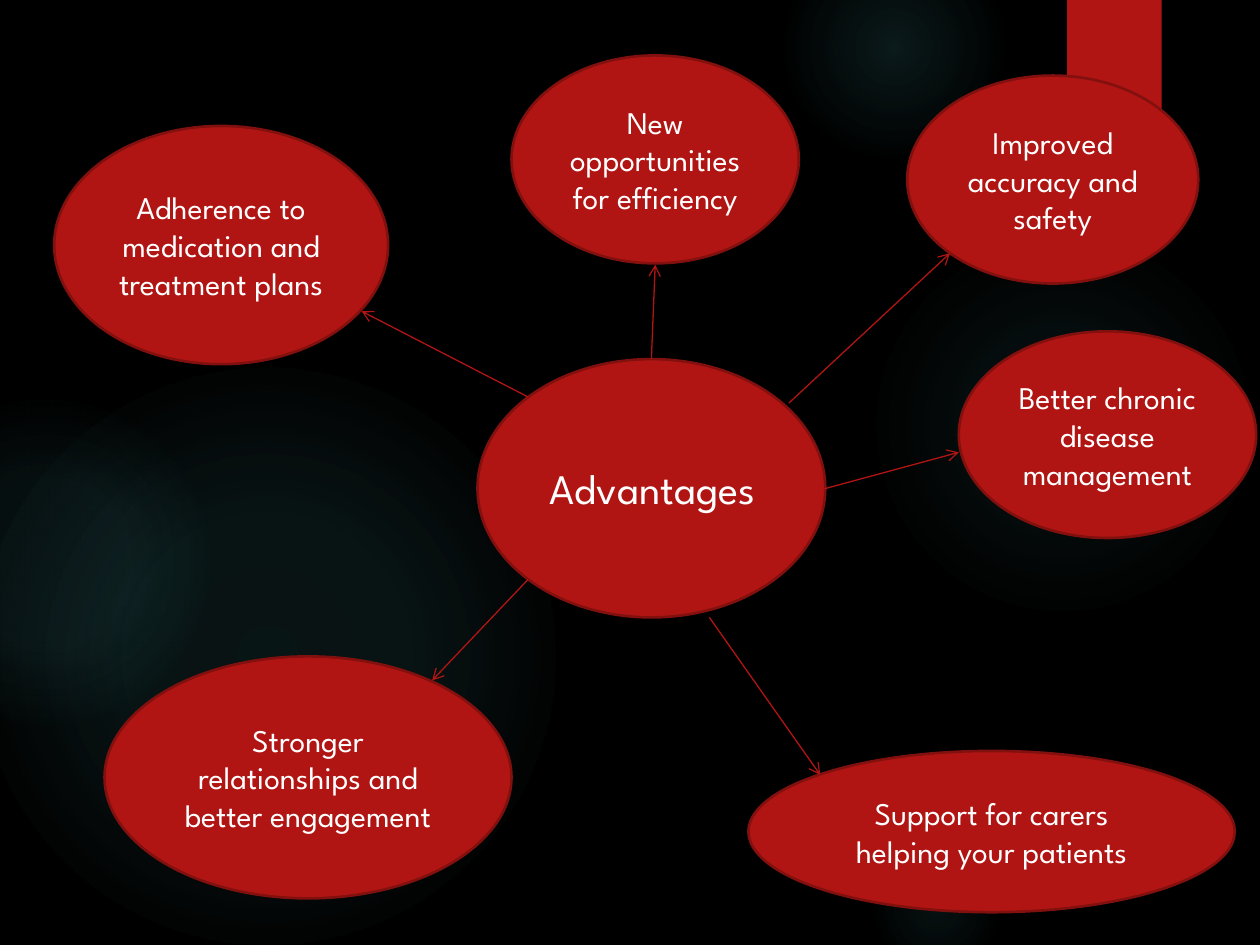
from lxml import etree
from pptx import Presentation
from pptx.dml.color import RGBColor
from pptx.enum.shapes import MSO_CONNECTOR, MSO_SHAPE
from pptx.enum.text import MSO_ANCHOR, PP_ALIGN
from pptx.oxml import parse_xml
from pptx.oxml.ns import nsdecls, qn
from pptx.util import Inches, Pt

BLACK = RGBColor(0x00, 0x00, 0x00)
WHITE = RGBColor(0xFF, 0xFF, 0xFF)
RED = RGBColor(0xB0, 0x15, 0x13)
DARK_RED = RGBColor(0x82, 0x10, 0x0E)
TEAL = RGBColor(0x50, 0xB9, 0xC1)
FONT = "League Spartan"

# left, top, diameter, gradient stops as (position %, opacity %)
GLOWS = [
    (6.89, 1.83, 3.08, [(0, 7), (36, 6), (69, 0)]),
    (6.22, -0.5, 1.75, [(0, 14), (36, 7), (73, 0)]),
    (6.89, 6.67, 1.08, [(0, 9), (36, 5), (66, 0)]),
    (-0.17, 2.92, 4.58, [(0, 11), (36, 10), (75, 0)]),
    (-0.92, 3.17, 2.58, [(0, 8), (36, 8), (72, 0)]),
]
RIBBON = (8.47, 0, 0.75, 1.2)
HUB = (3.79, 2.85, 2.76, 2.05)
HUB_LABEL = ("Advantages", (4.04, 3.62, 2.28, 0.5))

# text, oval (left, top, width, height), arrow start, arrow end
ADVANTAGES = [
    ("Improved accuracy and safety", (7.2, 0.6, 2.31, 1.65), (6.26, 3.2), (7.54, 2.01)),
    ("Better chronic disease management", (7.61, 2.63, 2.36, 1.64), (6.54, 3.88), (7.61, 3.59)),
    ("Adherence to medication and treatment plans", (0.43, 1, 2.65, 1.89), (4.19, 3.15), (2.87, 2.47)),
    ("Stronger relationships and better engagement", (0.83, 5.21, 3.23, 1.92), (4.19, 4.6), (3.43, 5.4)),
    ("Support for carers helping your patients", (5.94, 5.96, 3.86, 1.28), (5.63, 4.9), (6.51, 6.15)),
    ("New opportunities for efficiency", (4.06, 0.44, 2.28, 1.65), (5.17, 2.85), (5.2, 2.1)),
]


def inches(values):
    return [Inches(value) for value in values]


def add_red_shape(slide, kind, box, outlined=True):
    shape = slide.shapes.add_shape(kind, *inches(box))
    shape.shadow.inherit = False
    shape.fill.solid()
    shape.fill.fore_color.rgb = RED
    if outlined:
        shape.line.color.rgb = DARK_RED
        shape.line.width = Pt(1.5)
    else:
        shape.line.fill.background()
    return shape


def add_glow(slide, left, top, diameter, stops):
    """Add a circle that fades outwards from a faint teal centre."""
    glow = slide.shapes.add_shape(MSO_SHAPE.OVAL, *inches((left, top, diameter, diameter)))
    glow.shadow.inherit = False
    glow.line.fill.background()
    glow.fill.background()
    stop_xml = "".join(
        f'<a:gs pos="{position * 1000}"><a:srgbClr val="{TEAL}">'
        f'<a:alpha val="{opacity * 1000}"/></a:srgbClr></a:gs>'
        for position, opacity in stops
    )
    gradient = parse_xml(
        f'<a:gradFill {nsdecls("a")}><a:gsLst>{stop_xml}</a:gsLst><a:path path="circle">'
        '<a:fillToRect l="50000" t="50000" r="50000" b="50000"/></a:path></a:gradFill>'
    )
    properties = glow._element.spPr
    properties.replace(properties.find(qn("a:noFill")), gradient)


def write_label(shape, text, size, anchor):
    frame = shape.text_frame
    frame.word_wrap = True
    frame.vertical_anchor = anchor
    frame.text = text
    paragraph = frame.paragraphs[0]
    paragraph.alignment = PP_ALIGN.CENTER
    font = paragraph.runs[0].font
    font.name = FONT
    font.size = Pt(size)
    font.color.rgb = WHITE


def add_arrow(slide, start, end):
    arrow = slide.shapes.add_connector(MSO_CONNECTOR.STRAIGHT, *inches(start + end))
    arrow.line.color.rgb = RED
    arrow.line.width = Pt(0.75)
    etree.SubElement(arrow.line._get_or_add_ln(), qn("a:tailEnd"), type="arrow")
    etree.SubElement(arrow._element.spPr, qn("a:effectLst"))


def main():
    presentation = Presentation()
    presentation.slide_width, presentation.slide_height = inches((10, 7.5))
    slide = presentation.slides.add_slide(presentation.slide_layouts[6])
    slide.background.fill.solid()
    slide.background.fill.fore_color.rgb = BLACK

    for glow in GLOWS:
        add_glow(slide, *glow)
    add_red_shape(slide, MSO_SHAPE.RECTANGLE, RIBBON, outlined=False)

    add_red_shape(slide, MSO_SHAPE.OVAL, HUB)
    hub_text, hub_box = HUB_LABEL
    write_label(slide.shapes.add_textbox(*inches(hub_box)), hub_text, 24, MSO_ANCHOR.TOP)

    for text, box, _, _ in ADVANTAGES:
        oval = add_red_shape(slide, MSO_SHAPE.OVAL, box)
        write_label(oval, text, 18, MSO_ANCHOR.MIDDLE)
    for _, _, start, end in ADVANTAGES:
        add_arrow(slide, start, end)

    presentation.save("out.pptx")


if __name__ == "__main__":
    main()
